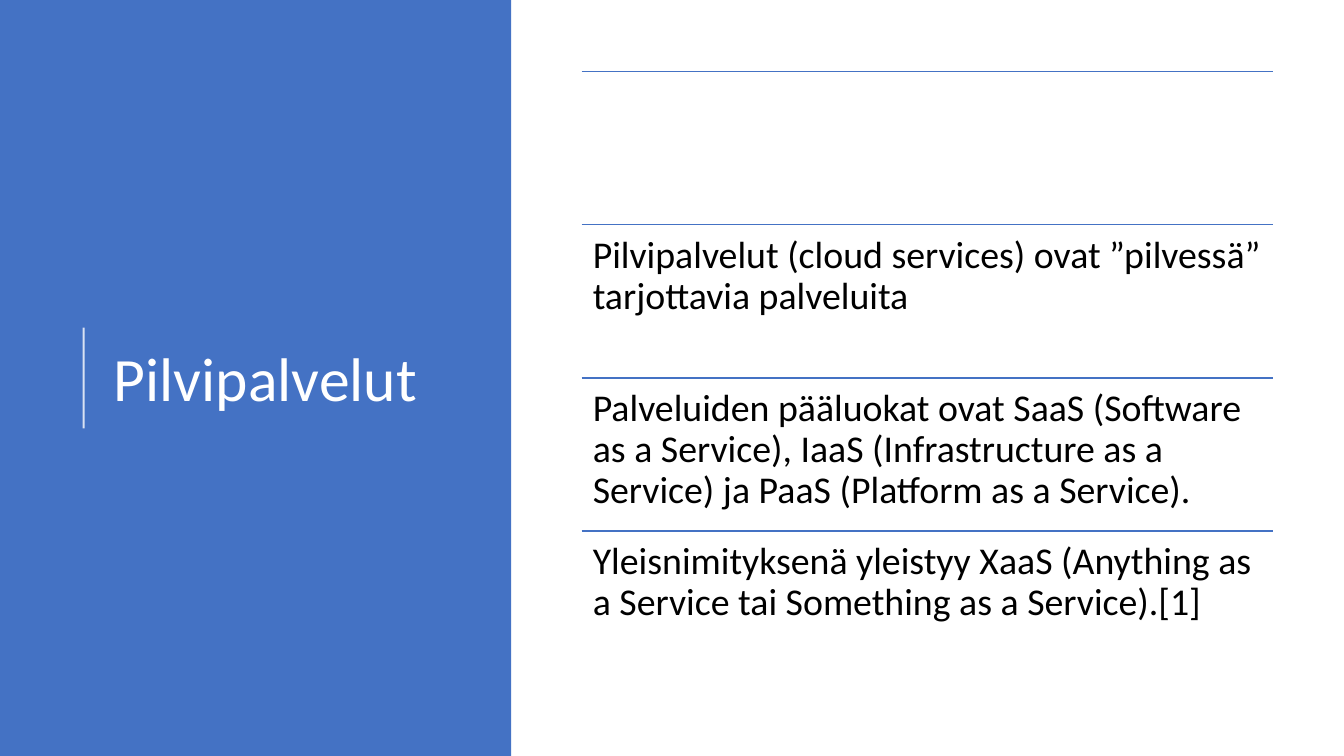
import pptx
import pptx.dml.color
import pptx.enum.shapes
import pptx.enum.text
import pptx.oxml
import pptx.oxml.ns
import pptx.util

PX = 9144
BLUE = "4472C4"
WHITE = "FFFFFF"
BLACK = "000000"


def px(length):
    return pptx.util.Emu(length * PX)


def color(value):
    return pptx.dml.color.RGBColor.from_string(value)


class SlideBuilder:
    font = "Calibri"
    line_spacing = 0.9

    def __init__(self, page):
        self.page = page

    def set_text(self, box, text, size, ink, anchor, inset_x, inset_y):
        frame = box.text_frame
        frame.text = text
        frame.word_wrap = True
        frame.auto_size = pptx.enum.text.MSO_AUTO_SIZE.NONE
        frame.vertical_anchor = anchor
        frame.margin_left = frame.margin_right = px(inset_x)
        frame.margin_top = frame.margin_bottom = px(inset_y)
        para = frame.paragraphs[0]
        para.alignment = pptx.enum.text.PP_ALIGN.LEFT
        para.line_spacing = self.line_spacing
        for span in para.runs:
            span.font.name = self.font
            span.font.size = pptx.util.Pt(size)
            span.font.color.rgb = color(ink)

    def panel(self, left, top, width, height, fill):
        shape = self.page.shapes.add_shape(
            pptx.enum.shapes.MSO_SHAPE.RECTANGLE,
            px(left), px(top), px(width), px(height))
        shape.shadow.inherit = False
        shape.fill.solid()
        shape.fill.fore_color.rgb = color(fill)
        shape.line.fill.background()

    def line(self, start, end, ink, weight, opacity=100):
        connector = self.page.shapes.add_connector(
            pptx.enum.shapes.MSO_CONNECTOR.STRAIGHT,
            px(start[0]), px(start[1]), px(end[0]), px(end[1]))
        connector.line.color.rgb = color(ink)
        connector.line.width = pptx.util.Pt(weight)
        properties = connector.element.spPr
        properties.append(pptx.oxml.parse_xml(
            "<a:effectLst %s/>" % pptx.oxml.ns.nsdecls("a")))
        if opacity < 100:
            tint = properties.find(".//" + pptx.oxml.ns.qn("a:srgbClr"))
            tint.append(pptx.oxml.parse_xml(
                '<a:alpha %s val="%d"/>' % (pptx.oxml.ns.nsdecls("a"), opacity * 1000)))

    def title(self, left, top, width, height, text):
        box = self.page.shapes.title
        box.left, box.top = px(left), px(top)
        box.width, box.height = px(width), px(height)
        self.set_text(box, text, 44, WHITE, pptx.enum.text.MSO_ANCHOR.MIDDLE, 10, 5)
        box.element.getparent().append(box.element)

    def text(self, left, top, width, height, text):
        box = self.page.shapes.add_textbox(px(left), px(top), px(width), px(height))
        self.set_text(box, text, 27, BLACK, pptx.enum.text.MSO_ANCHOR.TOP, 11, 11)


def main():
    deck = pptx.Presentation()
    deck.slide_width = px(1333)
    deck.slide_height = px(750)
    builder = SlideBuilder(deck.slides.add_slide(deck.slide_layouts[5]))

    builder.panel(0, 0, 507, 750, BLUE)
    builder.line((83, 425), (83, 325), WHITE, 1.5, opacity=80)
    builder.title(103, 78, 369, 602, "Pilvipalvelut")

    statements = [
        "",
        "Pilvipalvelut (cloud services) ovat ”pilvessä” tarjottavia palveluita",
        "Palveluiden pääluokat ovat SaaS (Software as a Service), "
        "IaaS (Infrastructure as a Service) ja PaaS (Platform as a Service).",
        "Yleisnimityksenä yleistyy XaaS (Anything as a Service tai "
        "Something as a Service).[1]",
    ]
    left, first_top, width, row_height = 577, 71, 686, 152
    for row, statement in enumerate(statements):
        top = first_top + row * row_height
        builder.line((left, top), (left + width, top), BLUE, 1)
        if statement:
            builder.text(left, top, width, row_height, statement)

    deck.save("out.pptx")


if __name__ == "__main__":
    main()
